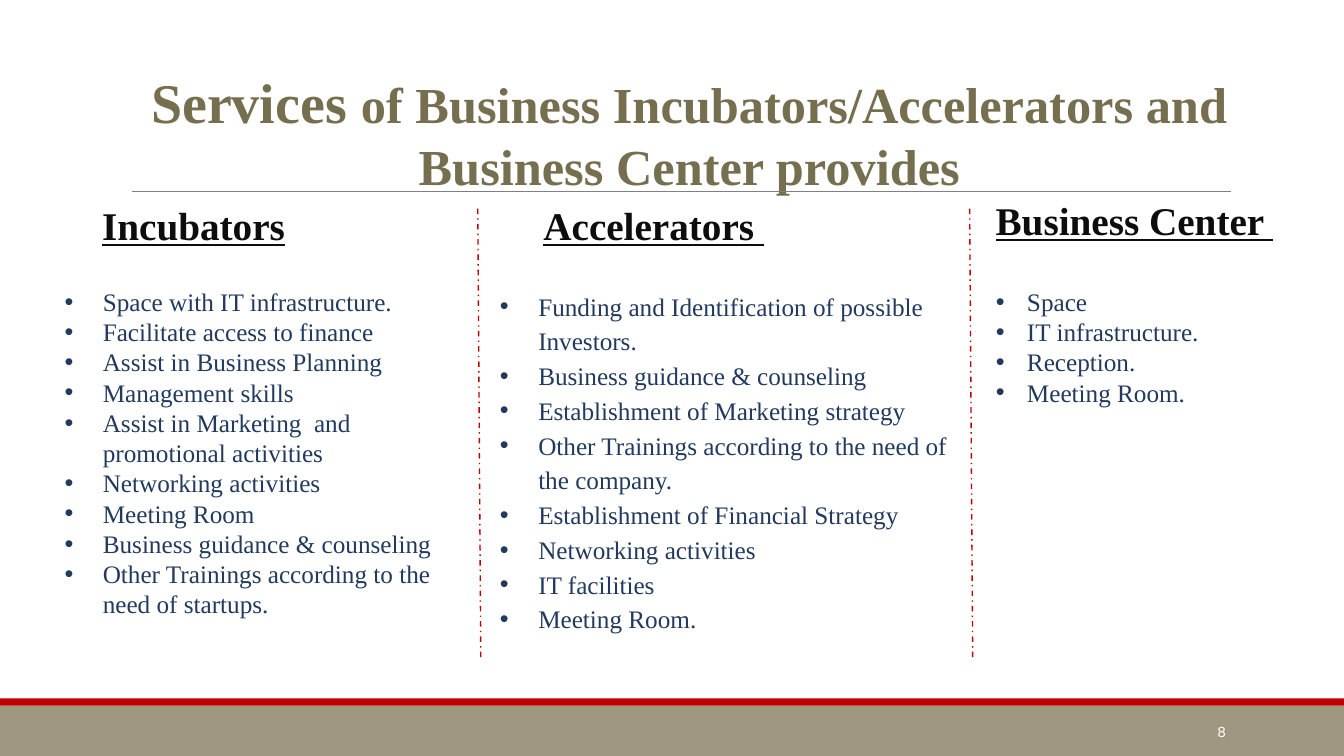
from dataclasses import dataclass

from lxml.etree import SubElement
from pptx import Presentation
from pptx.dml.color import RGBColor
from pptx.enum.dml import MSO_LINE
from pptx.enum.shapes import MSO_CONNECTOR, MSO_SHAPE
from pptx.enum.text import MSO_ANCHOR, MSO_AUTO_SIZE, PP_ALIGN
from pptx.oxml.ns import qn
from pptx.util import Inches, Pt

SLIDE_WIDTH, SLIDE_HEIGHT = Inches(13.33), Inches(7.5)
COLUMN, ROW = SLIDE_WIDTH / 40, SLIDE_HEIGHT / 30

WHITE = RGBColor(0xFF, 0xFF, 0xFF)
TAUPE = RGBColor(0xA0, 0x97, 0x81)
RED = RGBColor(0xC0, 0x00, 0x00)
GRAY = RGBColor(0x80, 0x80, 0x80)
OLIVE = RGBColor(0x76, 0x6F, 0x4F)
NAVY = RGBColor(0x22, 0x3A, 0x5E)
BLACK = RGBColor(0x0D, 0x0D, 0x0D)
SERIF, SANS = "Times New Roman", "Arial"


@dataclass(frozen=True)
class Area:
    """A rectangle in grid columns and rows."""
    left: float
    top: float
    width: float
    height: float

    def lengths(self) -> tuple[int, int, int, int]:
        """Return left, top, width and height in slide units."""
        return (round(self.left * COLUMN), round(self.top * ROW),
                round(self.width * COLUMN), round(self.height * ROW))


@dataclass(frozen=True)
class Service:
    """A heading with the list of services below it."""
    heading: str
    heading_area: Area
    items: tuple[str, ...]
    list_area: Area
    indent: float = 0.38
    spacing: float = 1.0


@dataclass(frozen=True)
class Rule:
    """A straight line between two grid points."""
    start: tuple[float, float]
    end: tuple[float, float]
    color: RGBColor
    width: float
    dash: MSO_LINE = MSO_LINE.SOLID


SERVICES = (
    Service("Incubators", Area(2.7, 7.8, 6.12, 2.28), (
        "Space with IT infrastructure.",
        "Facilitate access to finance",
        "Assist in Business Planning",
        "Management skills",
        "Assist in Marketing  and promotional activities",
        "Networking activities",
        "Meeting Room",
        "Business guidance & counseling",
        "Other Trainings according to the need of startups.",
    ), Area(1.62, 11.16, 12.57, 16.5)),
    Service("Accelerators ", Area(15.84, 7.8, 7.23, 2.28), (
        "Funding and Identification of possible Investors.",
        "Business guidance & counseling",
        "Establishment of Marketing strategy",
        "Other Trainings according to the need of the company.",
        "Establishment of Financial Strategy",
        "Networking activities",
        "IT facilities",
        "Meeting Room.",
    ), Area(14.58, 11.16, 14.01, 14.32), spacing=1.15),
    Service("Business Center ", Area(29.28, 7.6, 8.97, 2.28), (
        "Space",
        "IT infrastructure.",
        "Reception.",
        "Meeting Room.",
    ), Area(29.34, 11.16, 10.66, 6.48), indent=0.31),
)
BARS = ((Area(0, 28, 40, 2), TAUPE), (Area(0, 27.72, 40, 0.28), RED))
RULES = (
    Rule((3.93, 7.6), (36.63, 7.6), GRAY, 0.5),
    *(Rule((left, 8.28), (left + 0.09, 26.12), RED, 1, MSO_LINE.DASH_DOT)
      for left in (14.22, 28.86)),
)


def add_bar(slide, area: Area, color: RGBColor) -> None:
    """Draw a plain filled bar."""
    bar = slide.shapes.add_shape(MSO_SHAPE.RECTANGLE, *area.lengths())
    bar.shadow.inherit = False
    bar.fill.solid()
    bar.fill.fore_color.rgb = color
    bar.line.fill.background()


def add_rule(slide, rule: Rule) -> None:
    """Draw a line without a shadow."""
    (left, top), (right, bottom) = rule.start, rule.end
    line = slide.shapes.add_connector(
        MSO_CONNECTOR.STRAIGHT, round(left * COLUMN), round(top * ROW),
        round(right * COLUMN), round(bottom * ROW))
    line.line.color.rgb = rule.color
    line.line.width = Pt(rule.width)
    line.line.dash_style = rule.dash
    SubElement(line.element.spPr, qn("a:effectLst"))


def place(box, area: Area, anchor: MSO_ANCHOR = MSO_ANCHOR.TOP) -> None:
    """Move a text box or placeholder and set how its text sits."""
    box.left, box.top, box.width, box.height = area.lengths()
    frame = box.text_frame
    frame.word_wrap = True
    frame.auto_size = MSO_AUTO_SIZE.NONE
    frame.vertical_anchor = anchor


def add_bullet(para, indent: float) -> None:
    """Give a paragraph a round bullet with a hanging indent."""
    properties = para._p.get_or_add_pPr()
    properties.set("marL", str(Inches(indent)))
    properties.set("indent", str(-Inches(indent)))
    SubElement(properties, qn("a:buFont"), typeface=SANS)
    SubElement(properties, qn("a:buChar"), char="•")


def set_para(para, *, align: PP_ALIGN = PP_ALIGN.LEFT, spacing: float = 1.0) -> None:
    """Set alignment and spacing of a paragraph."""
    para.alignment = align
    para.line_spacing = spacing
    para.space_before = para.space_after = Pt(0)


def add_span(para, text: str, *, size: float, color: RGBColor, font: str = SERIF,
             bold: bool = False, underline: bool = False) -> None:
    """Add formatted text to a paragraph."""
    span = para.add_run()
    span.text = text
    span.font.name = font
    span.font.size = Pt(size)
    span.font.color.rgb = color
    span.font.bold = bold
    span.font.underline = underline


def fill_service(heading, body, service: Service) -> None:
    """Write a service heading and its bullet list."""
    place(heading, service.heading_area)
    para = heading.text_frame.paragraphs[0]
    set_para(para, align=PP_ALIGN.CENTER)
    add_span(para, service.heading, size=28, color=BLACK, bold=True, underline=True)
    place(body, service.list_area)
    frame = body.text_frame
    for number, item in enumerate(service.items):
        para = frame.add_paragraph() if number else frame.paragraphs[0]
        add_bullet(para, service.indent)
        set_para(para, spacing=service.spacing)
        add_span(para, item, size=18, color=NAVY)


def main() -> None:
    """Build the slide and save the deck."""
    deck = Presentation()
    deck.slide_width, deck.slide_height = SLIDE_WIDTH, SLIDE_HEIGHT
    slide = deck.slides.add_slide(deck.slide_layouts.get_by_name("Comparison"))
    for area, color in BARS:
        add_bar(slide, area, color)
    for rule in RULES:
        add_rule(slide, rule)

    title = slide.shapes.title
    place(title, Area(3.36, 2.48, 34.32, 5.52))
    para = title.text_frame.paragraphs[0]
    set_para(para, align=PP_ALIGN.CENTER)
    add_span(para, "Services ", size=40, color=OLIVE, bold=True)
    add_span(para, "of Business Incubators/Accelerators and Business Center provides",
             size=36, color=OLIVE, bold=True)

    holders = slide.placeholders
    last = SERVICES[-1]
    boxes = [(holders[1], holders[2]), (holders[3], holders[4]),
             (slide.shapes.add_textbox(*last.heading_area.lengths()),
              slide.shapes.add_textbox(*last.list_area.lengths()))]
    for (heading, body), service in zip(boxes, SERVICES):
        fill_service(heading, body, service)

    number_area = Area(32.49, 28.24, 4.29, 1.6)
    number = slide.shapes.add_textbox(*number_area.lengths())
    place(number, number_area, MSO_ANCHOR.MIDDLE)
    para = number.text_frame.paragraphs[0]
    set_para(para, align=PP_ALIGN.RIGHT)
    add_span(para, "8", size=10.5, color=WHITE, font=SANS)
    deck.save("out.pptx")


if __name__ == "__main__":
    main()
